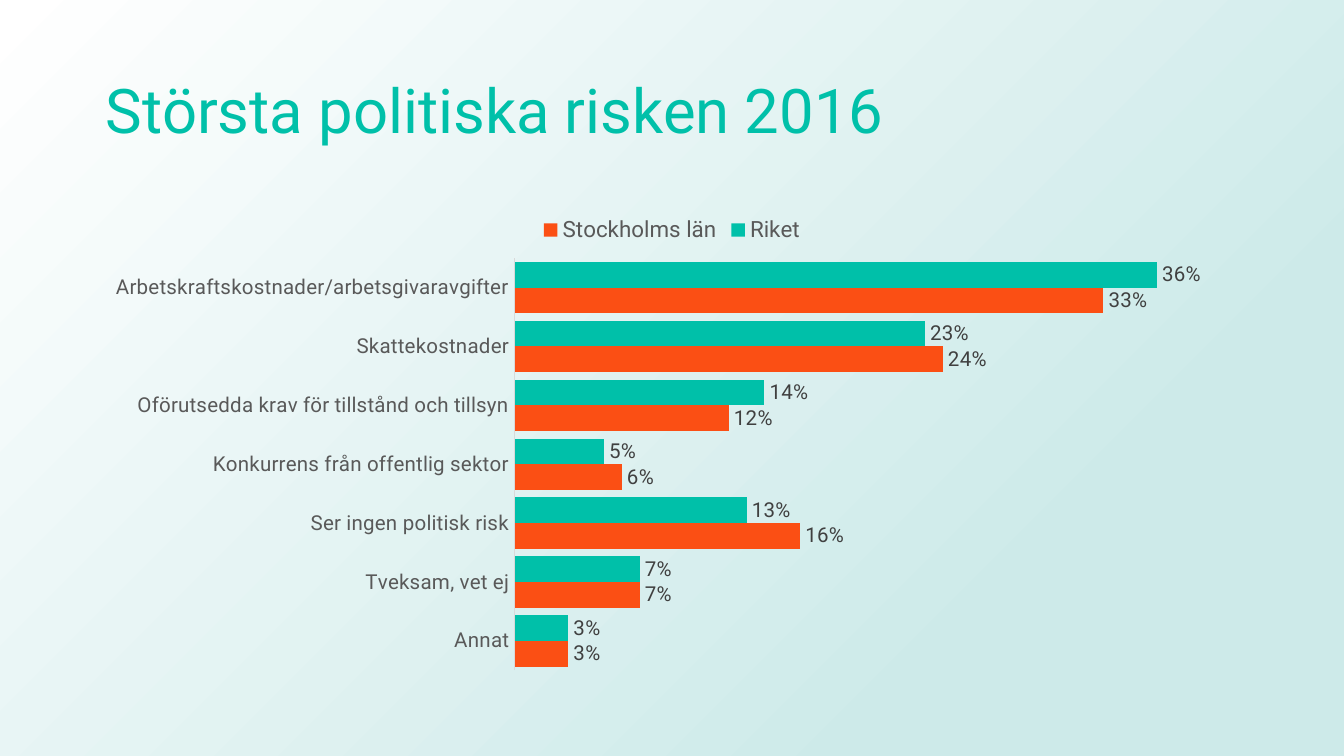
from lxml import etree
from pptx import Presentation
from pptx.chart.data import CategoryChartData
from pptx.dml.color import RGBColor
from pptx.enum import chart as ch, shapes, text
from pptx.oxml import ns
from pptx.util import Inches, Pt

COLORS = {"teal": "00C0A9", "orange": "FB4F14", "pale": "CDEAE9", "white": "FFFFFF",
          "axis": "D9D9D9", "gray": "595959", "dark": "404040"}
FONT = "Roboto"
CATS = ["Arbetskraftskostnader/arbetsgivaravgifter", "Skattekostnader",
        "Oförutsedda krav för tillstånd och tillsyn", "Konkurrens från offentlig sektor",
        "Ser ingen politisk risk", "Tveksam, vet ej", "Annat"]
SERIES = [("Riket", "teal", [0.36, 0.23, 0.14, 0.05, 0.13, 0.07, 0.03]),
          ("Stockholms län", "orange", [0.33, 0.24, 0.12, 0.06, 0.16, 0.07, 0.03])]


def rgb(name):
    return RGBColor.from_string(COLORS[name])


def style(font, size, color):
    font.name, font.size, font.bold = FONT, Pt(size), False
    font.color.rgb = rgb(color)


def add_back(slide, width, height):
    """Full-slide radial gradient, centred on the lower right corner."""
    back = slide.shapes.add_shape(shapes.MSO_SHAPE.RECTANGLE, 0, 0, width, height)
    back.shadow.inherit = False
    back.line.fill.background()
    back.fill.background()
    stops = "".join(f'<a:gs pos="{pos}"><a:srgbClr val="{COLORS[name]}"/></a:gs>'
                    for pos, name in ((23000, "pale"), (100000, "white")))
    grad = etree.fromstring(
        f'<a:gradFill {ns.nsdecls("a")} rotWithShape="1"><a:gsLst>{stops}</a:gsLst>'
        '<a:path path="circle"><a:fillToRect l="100000" t="100000"/></a:path></a:gradFill>')
    props = back.element.spPr
    props.replace(props.find(ns.qn("a:noFill")), grad)


def add_text(slide, words, box, size=12, color="dark", spacing=1.0):
    frame = slide.shapes.add_textbox(*map(Inches, box)).text_frame
    frame.word_wrap = True
    frame.vertical_anchor = text.MSO_ANCHOR.MIDDLE
    para = frame.paragraphs[0]
    para.line_spacing = spacing
    run = para.add_run()
    run.text = words
    style(run.font, size, color)


def add_bars(slide, box):
    data = CategoryChartData(number_format="0%")
    data.categories = CATS
    for name, _, values in SERIES:
        data.add_series(name, values)
    chart = slide.shapes.add_chart(ch.XL_CHART_TYPE.BAR_CLUSTERED,
                                   *map(Inches, box), data).chart
    chart.font.name, chart.font.size = "Calibri", Pt(10)
    chart.has_title = False

    # Legend
    chart.has_legend = True
    chart.legend.position = ch.XL_LEGEND_POSITION.TOP
    chart.legend.include_in_layout = False
    style(chart.legend.font, 12, "gray")

    # Axes
    cat = chart.category_axis
    cat.reverse_order = True
    cat.major_tick_mark = cat.minor_tick_mark = ch.XL_TICK_MARK.NONE
    cat.format.line.color.rgb = rgb("axis")
    cat.format.line.width = Pt(0.75)
    style(cat.tick_labels.font, 11, "gray")
    val = chart.value_axis
    val.visible = val.has_major_gridlines = False
    val.minimum_scale, val.maximum_scale = 0, 0.4

    # Bars and their labels
    plot = chart.plots[0]
    plot.gap_width, plot.overlap = 30, 0
    plot.vary_by_categories = False
    for series, (_, color, _) in zip(plot.series, SERIES):
        series.format.fill.solid()
        series.format.fill.fore_color.rgb = rgb(color)
        series.invert_if_negative = False
        labels = series.data_labels
        labels.show_value = True
        labels.number_format, labels.number_format_is_linked = "0%", False
        labels.position = ch.XL_LABEL_POSITION.OUTSIDE_END
        style(labels.font, 11, "dark")


def main():
    # Widescreen, 16:9
    deck = Presentation()
    deck.slide_width, deck.slide_height = Inches(10), Inches(10 * 9 / 16)
    slide = deck.slides.add_slide(deck.slide_layouts[6])
    add_back(slide, deck.slide_width, deck.slide_height)
    add_text(slide, "Största politiska risken 2016", (0.69, 0.3, 8.62, 1.09),
             size=33, color="teal", spacing=0.9)
    add_bars(slide, (0.69, 1.5, 8.62, 3.56))
    deck.save("out.pptx")


if __name__ == "__main__":
    main()
